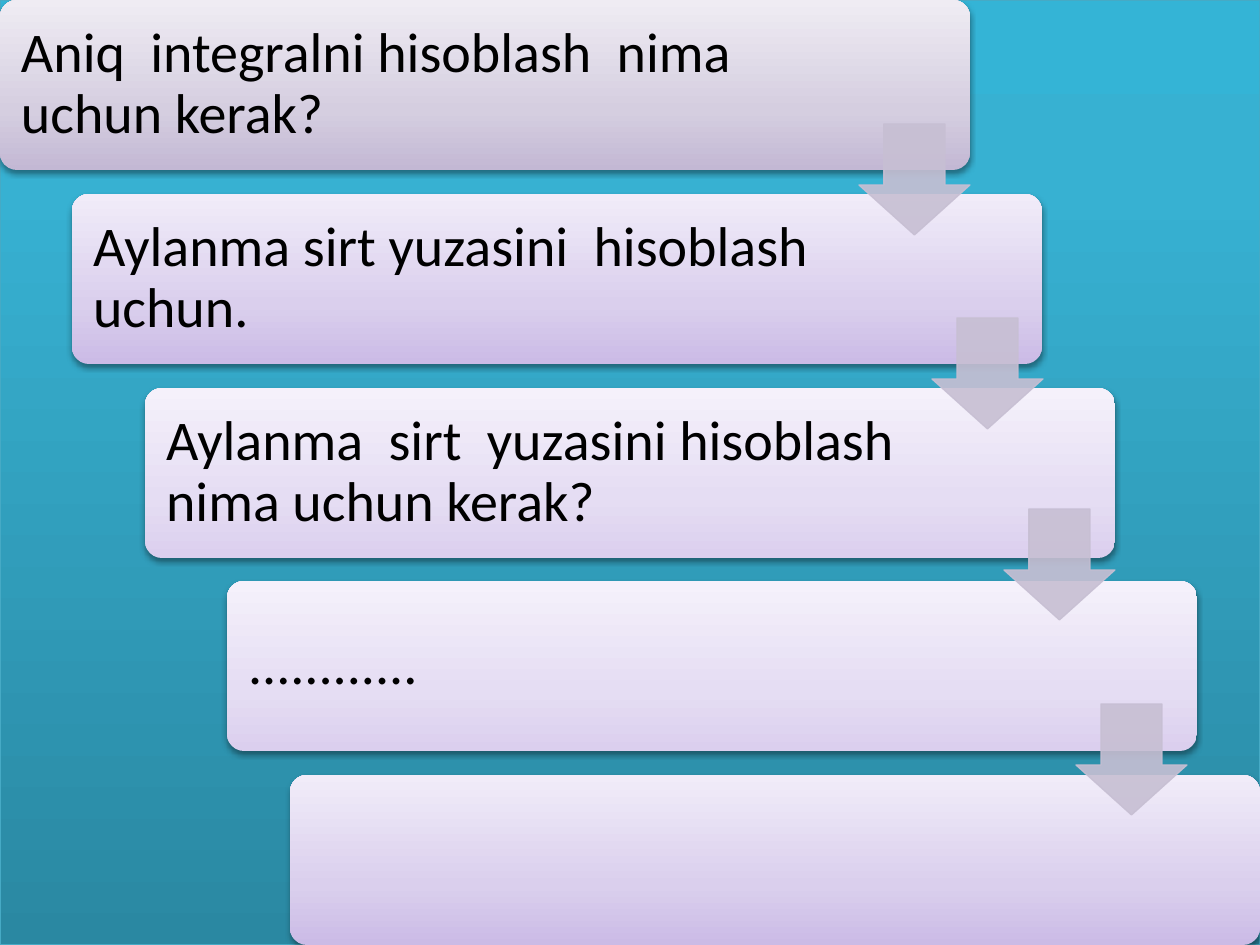
from pptx import Presentation
from pptx.dml.color import RGBColor
from pptx.enum.shapes import MSO_SHAPE
from pptx.enum.text import MSO_ANCHOR
from pptx.oxml.ns import qn
from pptx.util import Emu, Pt
from lxml import etree

RECTANGLE = MSO_SHAPE.RECTANGLE
ROUNDED = MSO_SHAPE.ROUNDED_RECTANGLE
DOWN_ARROW = MSO_SHAPE.DOWN_ARROW
MIDDLE = MSO_ANCHOR.MIDDLE

PX_PER_INCH = 126
BLACK = RGBColor(0x00, 0x00, 0x00)
BACKDROP_EDGE = RGBColor(0x46, 0xAA, 0xC5)
ARROW_GREY = RGBColor(0xC7, 0xBF, 0xD3)

# Gradients run from the bottom up: (position in percent, colour)
TEAL = ((0, RGBColor(0x2A, 0x88, 0xA2)), (80, RGBColor(0x37, 0xB1, 0xD2)),
        (100, RGBColor(0x34, 0xB4, 0xD6)))
GREY = ((0, RGBColor(0xC3, 0xB8, 0xD4)), (35, RGBColor(0xD5, 0xCE, 0xE0)),
        (100, RGBColor(0xEF, 0xEC, 0xF3)))
VIOLET = ((0, RGBColor(0xCB, 0xBB, 0xE6)), (35, RGBColor(0xDA, 0xCF, 0xED)),
          (100, RGBColor(0xF1, 0xEC, 0xF9)))
LILAC = ((0, RGBColor(0xDB, 0xCF, 0xEE)), (35, RGBColor(0xE5, 0xDD, 0xF3)),
         (100, RGBColor(0xF5, 0xF1, 0xFB)))


def px(length):
    return Emu(round(length * 914400 / PX_PER_INCH))


class StepSlide:
    font_name = "Calibri"
    font_size = Pt(32)
    inset = 16

    def __init__(self, slide):
        self.slide = slide

    def _shape(self, preset, left, top, width, height):
        shape = self.slide.shapes.add_shape(
            preset, px(left), px(top), px(width), px(height))
        shape.shadow.inherit = False
        return shape

    def _gradient(self, shape, stops):
        shape.fill.gradient()
        shape.fill.gradient_angle = 90
        stop_list = next(shape._element.spPr.iter(qn("a:gsLst")))
        stop_list.clear()
        for position, color in stops:
            stop = etree.SubElement(stop_list, qn("a:gs"), pos=str(position * 1000))
            etree.SubElement(stop, qn("a:srgbClr"), val=str(color))

    def _drop_shadow(self, shape, distance, opacity):
        effects = shape._element.spPr.find(qn("a:effectLst"))
        shadow = etree.SubElement(
            effects, qn("a:outerShdw"), blurRad=str(Pt(3.1)),
            dist=str(Pt(distance)), dir="5400000", rotWithShape="0")
        color = etree.SubElement(shadow, qn("a:srgbClr"), val=str(BLACK))
        etree.SubElement(color, qn("a:alpha"), val=str(opacity * 1000))

    def backdrop(self, width, height):
        panel = self._shape(RECTANGLE, 0, 0, width, height)
        self._gradient(panel, TEAL)
        panel.line.color.rgb = BACKDROP_EDGE
        panel.line.width = Pt(0.75)
        self._drop_shadow(panel, 1.8, 35)

    def card(self, left, top, width, height, stops):
        card = self._shape(ROUNDED, left, top, width, height)
        card.adjustments[0] = 0.1
        self._gradient(card, stops)
        card.line.fill.background()
        self._drop_shadow(card, 1.6, 38)

    def caption(self, left, top, width, height, text):
        caption = self.slide.shapes.add_textbox(
            px(left), px(top), px(width), px(height))
        frame = caption.text_frame
        frame.word_wrap = True
        frame.vertical_anchor = MIDDLE
        frame.margin_left = frame.margin_right = px(self.inset)
        frame.margin_top = frame.margin_bottom = px(self.inset)
        frame.text = text
        paragraph = frame.paragraphs[0]
        paragraph.line_spacing = 0.9
        font = paragraph.runs[0].font
        font.name = self.font_name
        font.size = self.font_size
        font.color.rgb = BLACK

    def arrow(self, left, top, size):
        arrow = self._shape(DOWN_ARROW, left, top, size, size)
        arrow.adjustments[0] = 0.55
        arrow.adjustments[1] = 0.45
        arrow.fill.solid()
        arrow.fill.fore_color.rgb = ARROW_GREY
        arrow.line.color.rgb = ARROW_GREY
        arrow.line.width = Pt(0.75)
        for color in arrow._element.spPr.iter(qn("a:srgbClr")):
            etree.SubElement(color, qn("a:alpha"), val="90000")


def main():
    slide_width, slide_height = 1260, 945
    card_width, card_height = 970, 170
    card_pitch = (slide_height - card_height) / 4
    padding = 5
    # Left edge, gradient, caption width, caption
    steps = (
        (0, GREY, 767, "Aniq  integralni hisoblash  nima uchun kerak?"),
        (72, VIOLET, 777, "Aylanma sirt yuzasini  hisoblash uchun."),
        (145, LILAC, 777, "Aylanma  sirt  yuzasini hisoblash  nima uchun kerak?"),
        (227, LILAC, 777, "............"),
        (290, VIOLET, 0, ""),
    )
    arrow_size = 111
    arrow_tops = (124, 318, 509, 704)

    presentation = Presentation()
    presentation.slide_width = px(slide_width)
    presentation.slide_height = px(slide_height)
    page = StepSlide(presentation.slides.add_slide(presentation.slide_layouts[6]))

    page.backdrop(slide_width, slide_height)

    # Staircase of cards with their captions
    for row, (left, stops, caption_width, text) in enumerate(steps):
        top = round(row * card_pitch)
        page.card(left, top, card_width, card_height, stops)
        if text:
            page.caption(left + padding, top + padding, caption_width,
                         card_height - 2 * padding, text)

    # Arrows from each card to the next
    for row, top in enumerate(arrow_tops):
        page.arrow(round(859 + row * 72.5), top, arrow_size)

    presentation.save("out.pptx")


if __name__ == "__main__":
    main()
